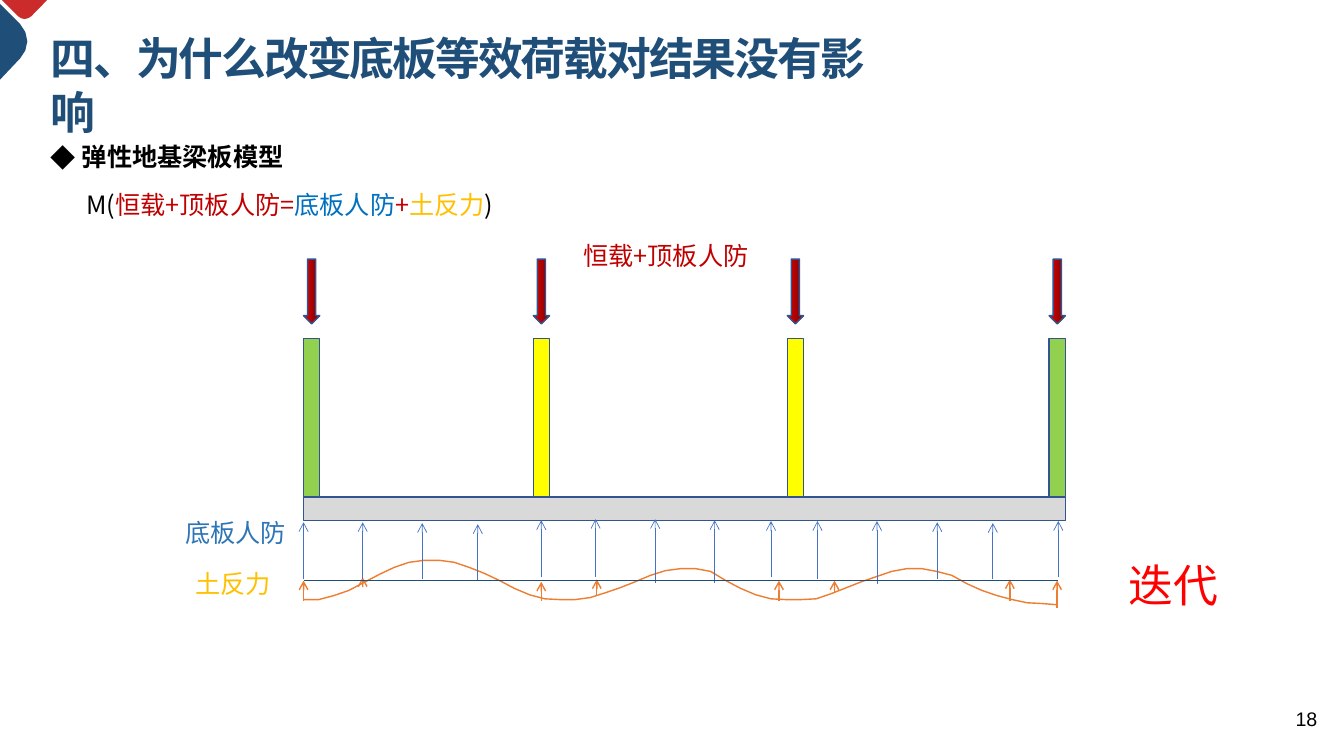
from lxml import etree
from pptx import Presentation
from pptx.dml.color import RGBColor
from pptx.enum import shapes, text
from pptx.oxml import ns
from pptx.util import Cm, Pt

SANS = "Noto Sans CJK SC"
NAVY, EDGE, BLUE, ORANGE = "1F4E79", "325491", "4472C4", "ED7D31"
RED, GOLD = "C00000", "FFC000"

POSTS = [(7.65, "92D050"), (13.44, "FFFF00"), (19.84, "FFFF00"), (26.44, "92D050")]
BASE = 14.63
# x, tail y and head y of each arrow, in cm
UPLIFT = [
    (7.65, 14.6, 13.16), (9.14, 14.6, 13.16), (10.64, 14.6, 13.18),
    (12.04, 14.63, 13.21), (13.64, 14.53, 13.11), (15.01, 14.53, 13.08),
    (16.51, 14.68, 13.08), (18.01, 14.68, 13.11), (19.43, 14.55, 13.13),
    (20.6, 14.6, 13.13), (22.1, 14.71, 13.13), (23.62, 14.58, 13.16),
    (25.02, 14.6, 13.18), (26.67, 14.55, 13.13),
]
SOIL = [
    (7.65, 15.14, 14.63), (9.14, 14.71, 14.55), (13.64, 15.14, 14.66),
    (15.04, 14.99, 14.6), (19.63, 15.14, 14.63), (21.03, 14.91, 14.63),
    (25.45, 15.14, 14.6), (26.64, 15.32, 14.63),
]
# heights of the soil reaction curve at equal steps
STEP = 0.38
WAVE = [
    15.11, 15.11, 15.01, 14.88, 14.68, 14.48, 14.3, 14.17, 14.12, 14.12,
    14.17, 14.3, 14.45, 14.63, 14.83, 14.99, 15.09, 15.11, 15.11, 15.06,
    14.94, 14.81, 14.66, 14.5, 14.38, 14.33, 14.33, 14.4, 14.63, 14.83,
    14.99, 15.09, 15.11, 15.11, 15.09, 14.96, 14.81, 14.66, 14.53, 14.4,
    14.33, 14.33, 14.4, 14.5, 14.71, 14.88, 15.01, 15.11, 15.19, 15.21, 15.24,
]
CREST = [(0.05, 0), (1.19, 0), (0.79, 0.41), (0.71, 0.46), (0.62, 0.48),
         (0.53, 0.46), (0.46, 0.41)]
FLANK = [(0, 0.1), (0.51, 0.61), (0.64, 0.81), (0.69, 1.04), (0.64, 1.27),
         (0.51, 1.47), (0, 2.01)]


def tint(code):
    return RGBColor.from_string(code)


def place(item, left, top, width, height):
    item.left, item.top = Cm(left), Cm(top)
    item.width, item.height = Cm(width), Cm(height)


def write(item, parts, size=18, font=SANS, bold=False, align="LEFT", gap=None, space=1):
    """Fill one paragraph with (words, colour) parts."""
    frame = item.text_frame
    frame.word_wrap = True
    frame.auto_size = text.MSO_AUTO_SIZE.NONE
    frame.vertical_anchor = text.MSO_ANCHOR.TOP
    para = frame.paragraphs[0]
    para.alignment = getattr(text.PP_ALIGN, align)
    para.line_spacing = space
    para.space_before = Pt(0)
    for words, code in parts:
        run = para.add_run()
        run.text = words
        run.font.size, run.font.bold, run.font.name = Pt(size), bold, font
        run.font.color.rgb = tint(code)
        props = run.font._element
        east = etree.SubElement(props, ns.qn("a:ea"))
        east.set("typeface", SANS if font == "Arial" else font)
        if gap is not None:
            props.set("spc", str(gap))
    return para


def label(slide, box, parts, **style):
    item = slide.shapes.add_textbox(*map(Cm, box))
    write(item, parts, **style)


def bullet(para, sign, indent):
    props = para._p.get_or_add_pPr()
    props.set("marL", str(Cm(indent)))
    props.set("indent", str(-Cm(indent)))
    etree.SubElement(props, ns.qn("a:buFont")).set("typeface", SANS)
    etree.SubElement(props, ns.qn("a:buChar")).set("char", sign)


def block(slide, kind, box, fill):
    """Add an edged shape; a pair of colours gives a gradient."""
    item = slide.shapes.add_shape(kind, *map(Cm, box))
    item.shadow.inherit = False
    if isinstance(fill, tuple):
        item.fill.gradient()
        item.fill.gradient_angle = 0
        for stop, code in zip(item.fill.gradient_stops, fill):
            stop.color.rgb = tint(code)
    else:
        item.fill.solid()
        item.fill.fore_color.rgb = tint(fill)
    item.line.color.rgb = tint(EDGE)
    item.line.width = Pt(1)


def outline(slide, points, fill=None, line=None):
    spots = [(Cm(x), Cm(y)) for x, y in points]
    maker = slide.shapes.build_freeform(*spots[0])
    maker.add_line_segments(spots[1:], close=fill is not None)
    item = maker.convert_to_shape()
    item.shadow.inherit = False
    if fill:
        item.fill.solid()
        item.fill.fore_color.rgb = tint(fill)
    else:
        item.fill.background()
    if line:
        item.line.color.rgb = tint(line)
        item.line.width = Pt(1)
    else:
        item.line.fill.background()


def stroke(slide, start, end, code, width, head=True):
    item = slide.shapes.add_connector(
        shapes.MSO_CONNECTOR.STRAIGHT, *map(Cm, start + end))
    item.line.color.rgb = tint(code)
    item.line.width = Pt(width)
    if head:
        tip = etree.SubElement(item.line._get_or_add_ln(), ns.qn("a:tailEnd"))
        tip.set("type", "arrow")
    etree.SubElement(item._element.spPr, ns.qn("a:effectLst"))


def frame(slide):
    """Draw the slab, its posts and the loads on them."""
    rect, down = shapes.MSO_SHAPE.RECTANGLE, shapes.MSO_SHAPE.DOWN_ARROW
    block(slide, rect, (7.65, 12.52, 19.2, 0.6), "D9D9D9")
    for left, fill in POSTS:
        block(slide, rect, (left, 8.53, 0.41, 3.99), fill)
        block(slide, down, (left, 6.53, 0.41, 1.63), ("E30000", "760303"))


def forces(slide):
    """Draw the soil curve and the upward arrows."""
    left = POSTS[0][0]
    outline(slide, [(left + i * STEP, y) for i, y in enumerate(WAVE)], line=ORANGE)
    for group, code, width in ((SOIL, ORANGE, 1), (UPLIFT, BLUE, 0.5)):
        for x, tail, head in group:
            stroke(slide, (x, tail), (x, head), code, width)
    stroke(slide, (7.67, BASE), (26.67, BASE), NAVY, 0.5, head=False)


def main():
    deck = Presentation()
    deck.slide_width, deck.slide_height = Cm(33.87), Cm(19.05)
    slide = deck.slides.add_slide(deck.slide_layouts[1])
    title, body = slide.placeholders

    outline(slide, CREST, fill="CB2B2B")
    outline(slide, FLANK, fill=NAVY)
    place(title, 1.02, 0.64, 22.02, 1.63)
    title.fill.solid()
    title.fill.fore_color.rgb = tint("FFFFFF")
    write(title, [("四、为什么改变底板等效荷载对结果没有影响", NAVY)],
          size=32, font="Arial", bold=True, gap=-150)
    place(body, 1.02, 2.67, 17.17, 3.33)
    para = write(body, [("弹性地基梁板模型", "000000")], bold=True, space=2)
    bullet(para, "◆", 0.79)

    frame(slide)
    forces(slide)
    load, slab, soil = "恒载+顶板人防", "底板人防", "土反力"
    label(slide, (14.45, 5.92, 5, 1.02), [(load, RED)])
    label(slide, (4.67, 14.2, 2.8, 1.02), [(soil, GOLD)])
    label(slide, (4.42, 12.9, 3.18, 1.02), [(slab, "2E75B6")])
    label(slide, (1.93, 4.65, 11.79, 1.02), [
        ("M(", "000000"), (load + "=", RED), (slab, "0070C0"),
        ("+", RED), (soil, GOLD), (")", "000000")])
    label(slide, (28.19, 13.92, 3.1, 1.63), [("迭代", "FF0000")],
          size=32, font="Noto Sans CJK JP")
    label(slide, (31.9, 17.68, 1.55, 1.02), [("18", "000000")],
          size=14, font="Arial", align="RIGHT")
    deck.save("out.pptx")


if __name__ == "__main__":
    main()
